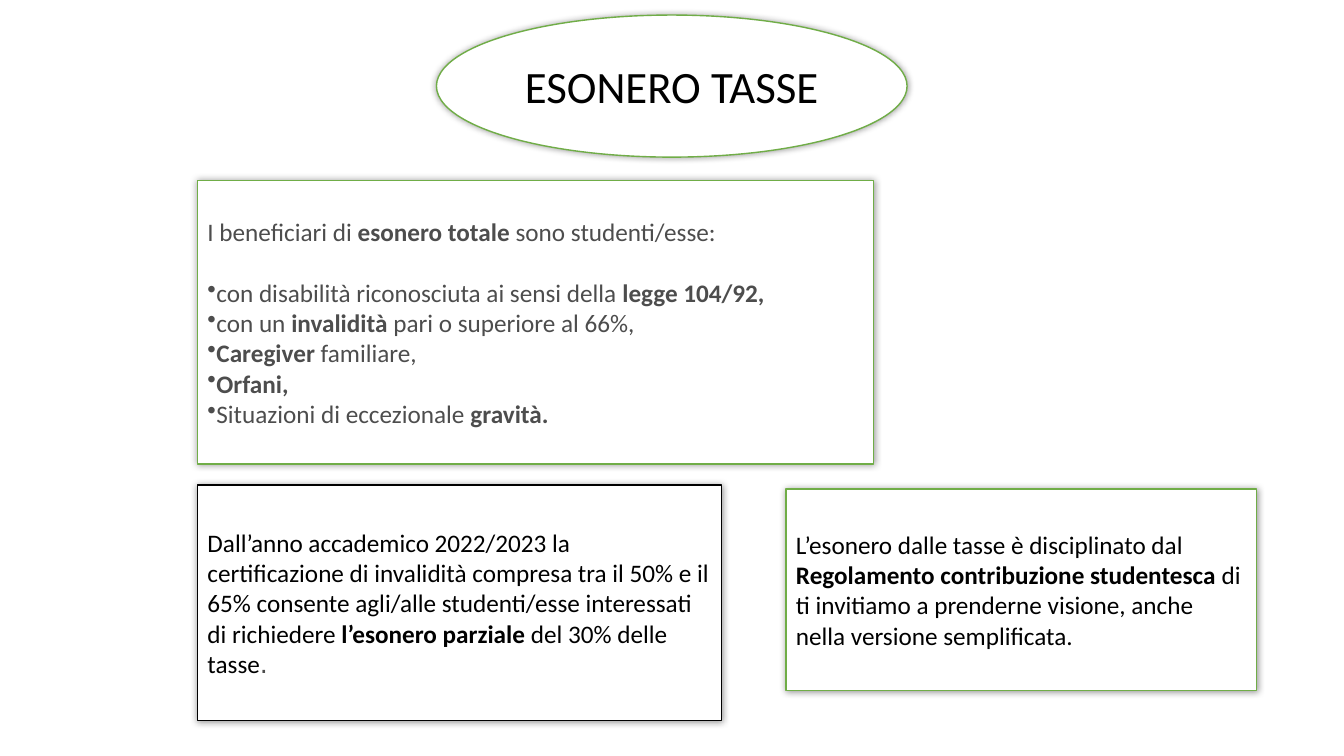
from lxml.etree import SubElement
from pptx import Presentation
from pptx.dml.color import RGBColor
from pptx.enum.shapes import MSO_SHAPE
from pptx.enum.text import MSO_ANCHOR, PP_ALIGN
from pptx.oxml.ns import qn
from pptx.util import Cm, Pt

COLORS = {"white": "FFFFFF", "green": "70AD47", "black": "000000", "grey": "4D4D4D"}


def add_box(kind, left, top, width, height, line):
    """White outlined shape with a soft shadow; returns its text frame."""
    sp = slide.shapes.add_shape(kind, Cm(left), Cm(top), Cm(width), Cm(height))
    sp.fill.solid()
    sp.fill.fore_color.rgb = RGBColor.from_string(COLORS[line and "white"])
    sp.line.color.rgb = RGBColor.from_string(COLORS[line])
    sp.line.width = Pt(1)
    sp.shadow.inherit = False
    effects = sp._element.spPr.find(qn("a:effectLst"))
    shadow = SubElement(effects, qn("a:outerShdw"), blurRad=str(Pt(5)), dist="0", dir="0")
    color = SubElement(shadow, qn("a:srgbClr"), val=COLORS["black"])
    SubElement(color, qn("a:alpha"), val="40000")
    tf = sp.text_frame
    tf.word_wrap = True
    tf.vertical_anchor = MSO_ANCHOR.MIDDLE
    return tf


def write(p, text, color, size=18, align=PP_ALIGN.LEFT):
    """Fill a paragraph; parts between ** marks are bold."""
    p.alignment = align
    for i, part in enumerate(text.split("**")):
        if part:
            r = p.add_run()
            r.text = part
            r.font.name = "Calibri"
            r.font.size = Pt(size)
            r.font.bold = i % 2 == 1
            r.font.color.rgb = RGBColor.from_string(COLORS[color])


prs = Presentation()
prs.slide_width, prs.slide_height = Cm(33.87), Cm(19.05)
slide = prs.slides.add_slide(prs.slide_layouts[6])

# Title
tf = add_box(MSO_SHAPE.OVAL, 11, 0.38, 11.86, 3.58, "green")
write(tf.paragraphs[0], "ESONERO TASSE", "black", 32, PP_ALIGN.CENTER)

# Regulation
tf = add_box(MSO_SHAPE.RECTANGLE, 19.81, 12.32, 11.86, 5.08, "green")
write(tf.paragraphs[0], "L’esonero dalle tasse è disciplinato dal **Regolamento contribuzione "
      "studentesca** di ti invitiamo a prenderne visione, anche nella versione semplificata.",
      "black")
tf.paragraphs[0].space_after = Pt(8)

# Full exemption
tf = add_box(MSO_SHAPE.RECTANGLE, 4.98, 4.55, 17.04, 7.14, "green")
p = tf.paragraphs[0]
write(p, "I beneficiari di **esonero totale **sono studenti/esse:", "grey")
p.space_after = Pt(22)
beneficiaries = [
    "con disabilità riconosciuta ai sensi della **legge 104/92,**",
    "con un **invalidità** pari o superiore al 66%,",
    "**Caregiver** familiare,",
    "**Orfani,**",
    "Situazioni di eccezionale **gravità.**",
]
for text in beneficiaries:
    p = tf.add_paragraph()
    write(p, text, "grey")
    SubElement(p._p.get_or_add_pPr(), qn("a:buChar"), char="•")

# Partial exemption
tf = add_box(MSO_SHAPE.RECTANGLE, 4.98, 12.22, 13.21, 5.94, "black")
p = tf.paragraphs[0]
write(p, "Dall’anno accademico 2022/2023 la certificazione di invalidità compresa tra il 50% "
      "e il 65% consente agli/alle studenti/esse interessati di richiedere "
      "**l’esonero parziale **del 30% delle tasse", "black")
write(p, ".", "grey")
p.runs[-1].font.name = "DejaVu Sans"
p.space_after = Pt(6)

prs.save("out.pptx")
